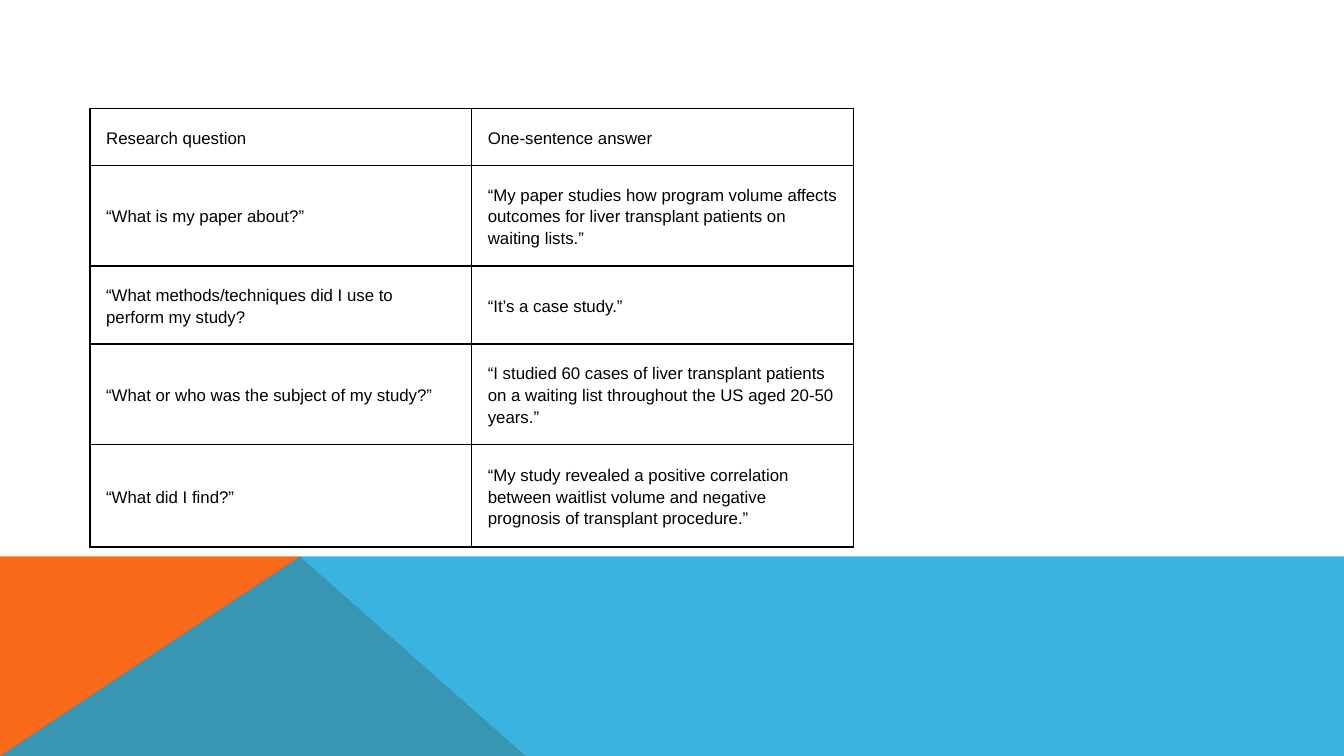
from typing import NamedTuple

from lxml.etree import SubElement
from pptx import Presentation
from pptx.dml.color import RGBColor
from pptx.enum.text import MSO_ANCHOR
from pptx.oxml.ns import qn
from pptx.slide import Slide
from pptx.table import _Cell
from pptx.util import Inches, Pt

BLACK = RGBColor(0x00, 0x00, 0x00)
ORANGE = RGBColor(0xF9, 0x6A, 0x1B)
BLUE = RGBColor(0x08, 0xA1, 0xD9)

SLIDE_WIDTH = 10
SLIDE_HEIGHT = SLIDE_WIDTH * 9 / 16
BAND_TOP, PEAK = 4.14, 2.23
BLANK_LAYOUT = 6

FONT_FORMAT = {"name": "Arial", "size": Pt(9), "bold": False}
ANSWER_FORMAT = {
    "vertical_anchor": MSO_ANCHOR.MIDDLE,
    "margin_left": Inches(0.12),
    "margin_right": Inches(0.12),
    "margin_top": Inches(0.12),
    "margin_bottom": Inches(0.12),
}
QUESTION_FORMAT = ANSWER_FORMAT | {"margin_right": Inches(0.13)}
TABLE_FLAGS = {"first_row": False, "horz_banding": False}
BORDER_TAGS = ("a:lnL", "a:lnR", "a:lnT", "a:lnB")


class Band(NamedTuple):
    points: list[tuple[float, float]]
    color: RGBColor
    opacity: int


class Row(NamedTuple):
    height: float
    question: str
    answer: str


BANDS = [
    Band([(0, SLIDE_HEIGHT), (0, BAND_TOP), (PEAK, BAND_TOP), (3.91, SLIDE_HEIGHT)], ORANGE, 100),
    Band(
        [(0, SLIDE_HEIGHT), (PEAK, BAND_TOP), (SLIDE_WIDTH, BAND_TOP), (SLIDE_WIDTH, SLIDE_HEIGHT)],
        BLUE,
        80,
    ),
]

ROWS = [
    Row(0.42, "Research question", "One-sentence answer"),
    Row(
        0.75,
        "“What is my paper about?”  ",
        "“My paper studies how program volume affects outcomes for liver transplant patients "
        "on waiting lists.”",
    ),
    Row(0.58, "“What methods/techniques did I use to perform my study?", "“It’s a case study.”"),
    Row(
        0.75,
        "“What or who was the subject of my study?” ",
        "“I studied 60 cases of liver transplant patients on a waiting list throughout the US "
        "aged 20-50 years.”",
    ),
    Row(
        0.76,
        "“What did I find?”",
        "“My study revealed a positive correlation between waitlist volume and negative "
        "prognosis of transplant procedure.”",
    ),
]


def apply_format(target: object, values: dict) -> None:
    for name, value in values.items():
        setattr(target, name, value)


def draw_band(slide: Slide, band: Band) -> None:
    start, *others = [(Inches(x), Inches(y)) for x, y in band.points]
    builder = slide.shapes.build_freeform(*start)
    builder.add_line_segments(others, close=True)
    shape = builder.convert_to_shape()
    shape.shadow.inherit = False
    shape.line.fill.background()
    shape.fill.solid()
    shape.fill.fore_color.rgb = band.color
    if band.opacity < 100:
        color = shape.fill._xPr.find(f".//{qn('a:srgbClr')}")
        SubElement(color, qn("a:alpha"), val=str(band.opacity * 1000))


def add_borders(cell: _Cell) -> None:
    """Line all four sides; borders must precede the fill in the cell properties."""
    properties = cell._tc.get_or_add_tcPr()
    for position, tag in enumerate(BORDER_TAGS):
        line = SubElement(properties, qn(tag), w=str(Pt(0.75)))
        fill = SubElement(line, qn("a:solidFill"))
        SubElement(fill, qn("a:srgbClr"), val=str(BLACK))
        properties.insert(position, line)


def fill_cell(cell: _Cell, text: str, cell_format: dict) -> None:
    apply_format(cell, cell_format)
    cell.fill.background()
    add_borders(cell)
    paragraph = cell.text_frame.paragraphs[0]
    paragraph.line_spacing = 1.15
    run = paragraph.add_run()
    run.text = text
    apply_format(run.font, FONT_FORMAT)
    run.font.color.rgb = BLACK


def draw_table(slide: Slide, rows: list[Row]) -> None:
    height = sum(row.height for row in rows)
    frame = slide.shapes.add_table(
        len(rows), 2, Inches(0.67), Inches(0.81), Inches(5.68), Inches(height)
    )
    table = frame.table
    apply_format(table, TABLE_FLAGS)
    for table_row, row in zip(table.rows, rows):
        table_row.height = Inches(row.height)
        question_cell, answer_cell = table_row.cells
        fill_cell(question_cell, row.question, QUESTION_FORMAT)
        fill_cell(answer_cell, row.answer, ANSWER_FORMAT)


def main() -> None:
    presentation = Presentation()
    presentation.slide_width = Inches(SLIDE_WIDTH)
    presentation.slide_height = Inches(SLIDE_HEIGHT)
    slide = presentation.slides.add_slide(presentation.slide_layouts[BLANK_LAYOUT])
    for band in BANDS:
        draw_band(slide, band)
    draw_table(slide, ROWS)
    presentation.save("out.pptx")


if __name__ == "__main__":
    main()
